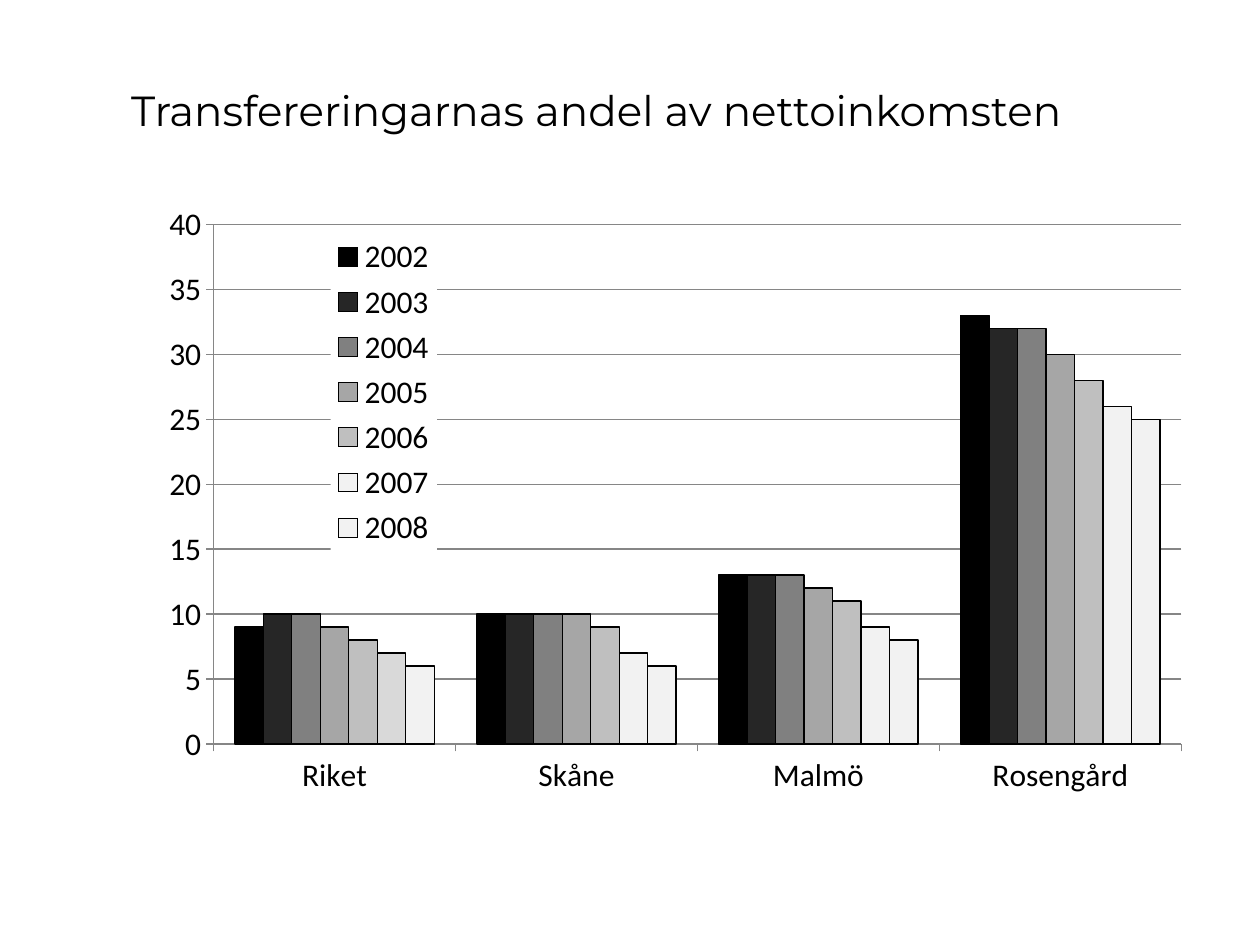
"""Build a slide with a clustered column chart of transfer shares by area and year."""
import lxml.etree
import pptx
import pptx.chart.data
import pptx.dml.color
import pptx.enum.chart
import pptx.enum.text
import pptx.oxml
import pptx.oxml.ns
import pptx.util

Inches, Pt = pptx.util.Inches, pptx.util.Pt
RGBColor = pptx.dml.color.RGBColor

BLACK = RGBColor(0x00, 0x00, 0x00)
AXIS_GREY = RGBColor(0x86, 0x86, 0x86)
RIKET_2007_GREY = RGBColor(0xD9, 0xD9, 0xD9)
PALE_GREY = RGBColor(0xF2, 0xF2, 0xF2)

AREAS = ["Riket", "Skåne", "Malmö", "Rosengård"]
SHARES = {
    "2002": ([9, 10, 13, 33], BLACK),
    "2003": ([10, 10, 13, 32], RGBColor(0x26, 0x26, 0x26)),
    "2004": ([10, 10, 13, 32], RGBColor(0x80, 0x80, 0x80)),
    "2005": ([9, 10, 12, 30], RGBColor(0xA6, 0xA6, 0xA6)),
    "2006": ([8, 9, 11, 28], RGBColor(0xBF, 0xBF, 0xBF)),
    "2007": ([7, 7, 9, 26], PALE_GREY),
    "2008": ([6, 6, 8, 25], PALE_GREY),
}


def add_title(page, text):
    """Fill and place the title placeholder."""
    title = page.shapes.title
    title.left, title.top = Inches(0.94), Inches(0.62)
    title.width, title.height = Inches(8.44), Inches(0.5)
    frame = title.text_frame
    frame.text = text
    frame.word_wrap = True
    frame.auto_size = pptx.enum.text.MSO_AUTO_SIZE.NONE
    frame.vertical_anchor = pptx.enum.text.MSO_ANCHOR.MIDDLE
    para = frame.paragraphs[0]
    para.alignment = pptx.enum.text.PP_ALIGN.LEFT
    font = para.runs[0].font
    font.name, font.size = "Montserrat", Pt(24)
    font.color.rgb = BLACK


def make_layout(left, top, width, height, inner=False):
    """Return a manual layout element in fractions of the chart."""
    target = '<c:layoutTarget val="inner"/>' if inner else ""
    return pptx.oxml.parse_xml(
        f'<c:layout {pptx.oxml.ns.nsdecls("c")}><c:manualLayout>{target}'
        '<c:xMode val="edge"/><c:yMode val="edge"/>'
        f'<c:x val="{left}"/><c:y val="{top}"/><c:w val="{width}"/><c:h val="{height}"/>'
        '</c:manualLayout></c:layout>')


def place_plot(chart):
    """Give the plot area a fixed inner rectangle."""
    area = chart.element.find(".//" + pptx.oxml.ns.qn("c:plotArea"))
    for layout in area.findall(pptx.oxml.ns.qn("c:layout")):
        area.remove(layout)
    area.insert(0, make_layout(0.08, 0.05, 0.91, 0.82, inner=True))


def add_legend(chart):
    """Lay a white legend over the plot area."""
    chart.has_legend = True
    chart.legend.position = pptx.enum.chart.XL_LEGEND_POSITION.RIGHT
    chart.legend.include_in_layout = True
    legend = chart.element.find(".//" + pptx.oxml.ns.qn("c:legend"))
    for layout in legend.findall(pptx.oxml.ns.qn("c:layout")):
        legend.remove(layout)
    overlay = legend.find(pptx.oxml.ns.qn("c:overlay"))
    overlay.addprevious(make_layout(0.19, 0.06, 0.1, 0.51))
    overlay.addnext(pptx.oxml.parse_xml(
        f'<c:spPr {pptx.oxml.ns.nsdecls("c", "a")}><a:solidFill>'
        '<a:srgbClr val="FFFFFF"/></a:solidFill><a:ln><a:noFill/></a:ln></c:spPr>'))


def style_line(line, color):
    """Draw a thin line in one colour."""
    line.color.rgb = color
    line.width = Pt(0.75)


def style_bar(bar, color):
    """Fill a series or a single column and outline it in black."""
    bar.format.fill.solid()
    bar.format.fill.fore_color.rgb = color
    style_line(bar.format.line, BLACK)


def style_axes(chart):
    """Set the scale, ticks and lines of both axes."""
    values = chart.value_axis
    values.minimum_scale, values.maximum_scale, values.major_unit = 0, 40, 5
    values.has_major_gridlines = True
    style_line(values.major_gridlines.format.line, AXIS_GREY)
    for axis in (values, chart.category_axis):
        axis.major_tick_mark = pptx.enum.chart.XL_TICK_MARK.OUTSIDE
        axis.minor_tick_mark = pptx.enum.chart.XL_TICK_MARK.NONE
        style_line(axis.format.line, AXIS_GREY)


def add_share_chart(page):
    """Add the column chart of shares by area and year."""
    data = pptx.chart.data.CategoryChartData(number_format="0")
    data.categories = AREAS
    for year, (shares, _) in SHARES.items():
        data.add_series(year, shares)
    chart = page.shapes.add_chart(
        pptx.enum.chart.XL_CHART_TYPE.COLUMN_CLUSTERED,
        Inches(1.02), Inches(1.53), Inches(8.44), Inches(5.03), data).chart
    chart.has_title = False
    chart.font.name, chart.font.size = "Calibri", Pt(18)
    chart.font.color.rgb = BLACK
    plot = chart.plots[0]
    plot.vary_by_categories = False
    plot.gap_width, plot.overlap = 150, 0
    for series in plot.series:
        style_bar(series, SHARES[series.name][1])
        if series.name == "2007":
            style_bar(series.points[0], RIKET_2007_GREY)
    style_axes(chart)
    place_plot(chart)
    add_legend(chart)


def main():
    """Create the deck and save it."""
    deck = pptx.Presentation()
    deck.slide_width, deck.slide_height = Inches(10), Inches(7.5)
    page = deck.slides.add_slide(deck.slide_layouts[5])
    add_share_chart(page)
    add_title(page, "Transfereringarnas andel av nettoinkomsten")
    deck.save("out.pptx")


if __name__ == "__main__":
    main()
